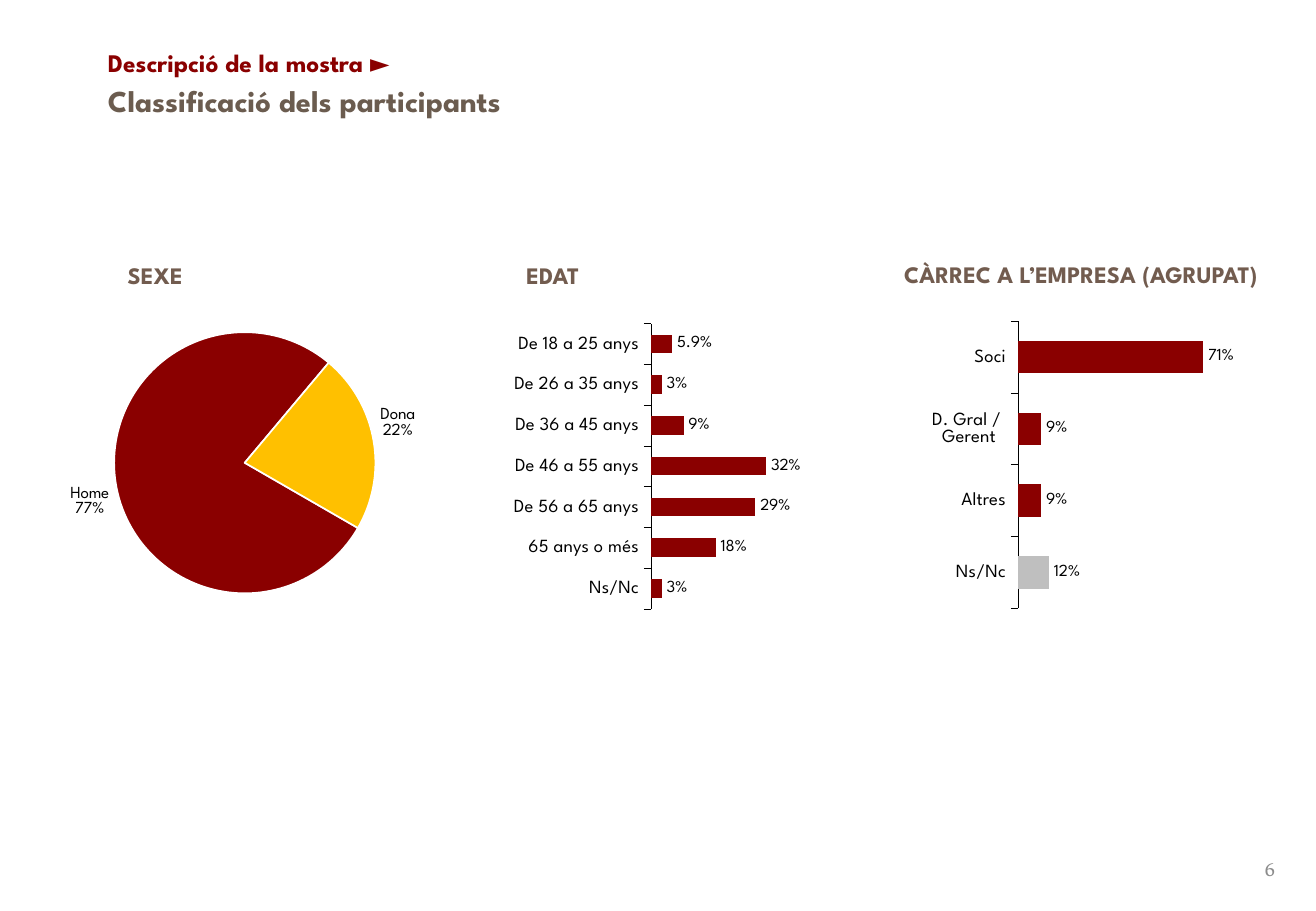
import dataclasses

import lxml.etree
import pptx
import pptx.chart.data
import pptx.dml.color
import pptx.enum.chart
import pptx.enum.text
import pptx.oxml.ns
import pptx.util

qn = pptx.oxml.ns.qn
XL = pptx.enum.chart
ANCHOR = pptx.enum.text.MSO_ANCHOR
ALIGN = pptx.enum.text.PP_ALIGN


@dataclasses.dataclass(frozen=True)
class Theme:
    font: str = "League Spartan"
    number_font: str = "Vollkorn"
    red: str = "8A0000"
    gold: str = "FFC000"
    silver: str = "BFBFBF"
    title: str = "6B5C4F"
    heading: str = "725C4F"
    number: str = "8C8C8C"
    black: str = "000000"
    white: str = "FFFFFF"
    title_size: int = 18
    section_size: int = 15
    heading_size: int = 14
    number_size: int = 12
    axis_size: int = 11
    label_size: int = 10


def rgb(color):
    return pptx.dml.color.RGBColor.from_string(color)


class Deck:
    def __init__(self, theme):
        self.theme = theme
        self.prs = pptx.Presentation()
        self.prs.slide_width = pptx.util.Inches(10.83)
        self.prs.slide_height = pptx.util.Inches(7.5)
        self.s = self.prs.slides.add_slide(self.prs.slide_layouts[6])

    def box(self, x, y, w, h):
        width, height = self.prs.slide_width, self.prs.slide_height
        return [round(share * side / 100) for share, side in
                zip((x, y, w, h), (width, height, width, height))]

    def style(self, font, size, color, name=None, bold=False):
        font.name = name or self.theme.font
        font.size = pptx.util.Pt(size)
        font.bold = bold
        font.color.rgb = rgb(color)

    def text(self, text, place, size, color, bold=True, name=None,
             anchor=ANCHOR.TOP, align=ALIGN.LEFT):
        tf = self.s.shapes.add_textbox(*self.box(*place)).text_frame
        tf.word_wrap = True
        tf.vertical_anchor = anchor
        p = tf.paragraphs[0]
        p.text = text
        p.alignment = align
        self.style(p.font, size, color, name, bold)

    def chart(self, kind, place, inner, values, fmt, colors):
        data = pptx.chart.data.CategoryChartData(number_format="0%")
        data.categories = list(values)
        data.add_series("Series 1", list(values.values()))
        chart = self.s.shapes.add_chart(kind, *self.box(*place), data).chart
        chart.has_legend = False
        chart.has_title = False
        self.style(chart.font, self.theme.label_size, self.theme.black)
        self.plot_area(chart, inner)
        plot = chart.plots[0]
        plot.vary_by_categories = False
        plot.has_data_labels = True
        labels = plot.data_labels
        labels.show_value = True
        labels.number_format = fmt
        labels.number_format_is_linked = False
        labels.position = XL.XL_LABEL_POSITION.OUTSIDE_END
        self.style(labels.font, self.theme.label_size, self.theme.black)
        for i, color in enumerate(colors):
            fill = plot.series[0].points[i].format.fill
            fill.solid()
            fill.fore_color.rgb = rgb(color)
        return chart

    def plot_area(self, chart, inner):
        area = chart._chartSpace.find(".//" + qn("c:plotArea"))
        for old in area.findall(qn("c:layout")):
            area.remove(old)
        layout = lxml.etree.Element(qn("c:layout"))
        area.insert(0, layout)
        manual = lxml.etree.SubElement(layout, qn("c:manualLayout"))
        settings = [("layoutTarget", "inner"), ("xMode", "edge"), ("yMode", "edge")]
        for tag, val in settings + list(zip("xywh", inner)):
            lxml.etree.SubElement(manual, qn("c:" + tag)).set("val", str(val))

    def pie(self, place, inner, values, colors, start):
        chart = self.chart(XL.XL_CHART_TYPE.PIE, place, inner, values, "0%", colors)
        plot = chart.plots[0]
        labels = plot.data_labels
        labels.show_category_name = True
        separator = lxml.etree.Element(qn("c:separator"))
        separator.text = "\n"
        labels._element.find(qn("c:showBubbleSize")).addnext(separator)
        pie = plot._element
        for old in pie.findall(qn("c:firstSliceAng")):
            pie.remove(old)
        lxml.etree.SubElement(pie, qn("c:firstSliceAng")).set("val", str(start))
        for i in range(len(values)):
            line = plot.series[0].points[i].format.line
            line.color.rgb = rgb(self.theme.white)
            line.width = pptx.util.Pt(1)

    def bars(self, place, inner, values, fmt="0%", last=None):
        colors = [self.theme.red] * len(values)
        colors[-1] = last or self.theme.red
        chart = self.chart(XL.XL_CHART_TYPE.BAR_CLUSTERED, place, inner, values, fmt, colors)
        chart.plots[0].gap_width = 120
        axis = chart.category_axis
        axis.reverse_order = True
        axis.has_major_gridlines = False
        axis.major_tick_mark = XL.XL_TICK_MARK.OUTSIDE
        axis.format.line.color.rgb = rgb(self.theme.black)
        axis.format.line.width = pptx.util.Pt(0.25)
        self.style(axis.tick_labels.font, self.theme.axis_size, self.theme.black)
        scale = chart.value_axis
        scale.minimum_scale = 0
        scale.maximum_scale = 1
        scale.has_major_gridlines = False
        scale.visible = False


def main():
    t = Theme()
    deck = Deck(t)
    deck.text("Classificació dels participants", (7.3, 8.4, 77.7, 6.1), t.title_size, t.title)
    deck.pie((-5.1, 27.9, 44.6, 50.4), (0.307, 0.17, 0.449, 0.569),
             {"Home": 0.77, "Dona": 0.22}, [t.red, t.gold], 120)
    for heading, x, y in (("SEXE", 8.8, 28), ("EDAT", 39.1, 28),
                          ("CÀRREC A L’EMPRESA (AGRUPAT)", 67.8, 27.9)):
        deck.text(heading, (x, y, 33.4, 4.5), t.heading_size, t.heading)
    ages = {"De 18 a 25 anys": 0.059, "De 26 a 35 anys": 0.03, "De 36 a 45 anys": 0.09,
            "De 46 a 55 anys": 0.32, "De 56 a 65 anys": 0.29, "65 anys o més": 0.18,
            "Ns/Nc": 0.03}
    deck.bars((36.8, 33.6, 40.9, 34.5), (0.31, 0.056, 0.669, 0.908), ages,
              fmt="[=0.059]0.0%;0%")
    posts = {"Soci": 0.71, "D. Gral / \nGerent": 0.09, "Altres": 0.09, "Ns/Nc": 0.12}
    deck.bars((56.1, 33.5, 41.6, 34.7), (0.511, 0.051, 0.477, 0.908), posts, last=t.silver)
    deck.text("Descripció de la mostra ►", (7.3, 3.7, 85, 6.4), t.section_size, t.red,
              anchor=ANCHOR.MIDDLE)
    deck.text("6", (75.3, 92.7, 22.5, 5.3), t.number_size, t.number, bold=False,
              name=t.number_font, anchor=ANCHOR.MIDDLE, align=ALIGN.RIGHT)
    deck.prs.save("out.pptx")


if __name__ == "__main__":
    main()
